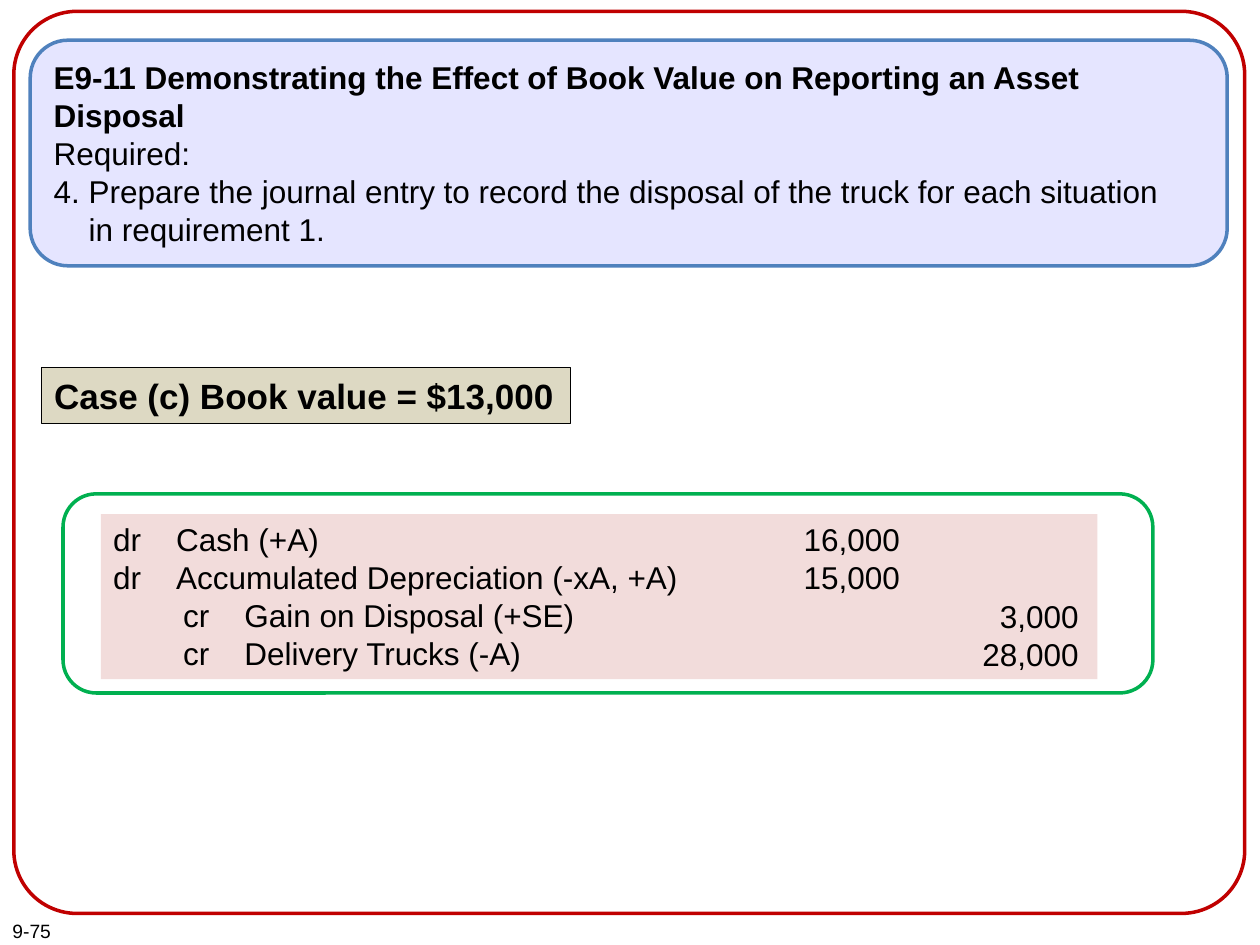
import pptx
import pptx.dml.color
import pptx.enum.shapes
import pptx.enum.text
import pptx.util

Pt = pptx.util.Pt
SHAPE = pptx.enum.shapes.MSO_SHAPE
ANCHOR = pptx.enum.text.MSO_ANCHOR
ALIGN = pptx.enum.text.PP_ALIGN


def color(value):
    """Return the colour for a hex string."""
    return pptx.dml.color.RGBColor.from_string(value)


def add_panel(shapes, kind, box, fill=None, line=None, weight=2):
    """Add a preset shape with an optional fill and outline."""
    panel = shapes.add_shape(kind, *map(Pt, box))
    panel.shadow.inherit = False
    if fill:
        panel.fill.solid()
        panel.fill.fore_color.rgb = color(fill)
    else:
        panel.fill.background()
    if line:
        panel.line.color.rgb = color(line)
        panel.line.width = Pt(weight)
    else:
        panel.line.fill.background()
    return panel


def write(shape, lines, size=18, align=ALIGN.LEFT, anchor=ANCHOR.TOP, wrap=True):
    """Write lines of (text, bold, left margin, hanging indent) into a shape."""
    frame = shape.text_frame
    for name, value in {"word_wrap": wrap, "vertical_anchor": anchor}.items():
        setattr(frame, name, value)
    for index, (text, bold, margin, hanging) in enumerate(lines):
        paragraph = frame.paragraphs[0] if index == 0 else frame.add_paragraph()
        paragraph.text = text
        paragraph.alignment = align
        if margin:
            properties = paragraph._p.get_or_add_pPr()
            properties.set("marL", str(Pt(margin)))
            properties.set("indent", str(-Pt(hanging)))
        for run in paragraph.runs:
            for name, value in {"name": "Arial", "size": Pt(size), "bold": bold}.items():
                setattr(run.font, name, value)
            run.font.color.rgb = color("000000")


def add_text(shapes, box, lines, **layout):
    """Add a text box holding the given lines."""
    write(shapes.add_textbox(*map(Pt, box)), lines, **layout)


def add_journal_entry(slide):
    """Add the grouped journal entry with its debit and credit columns."""
    shapes = slide.shapes.add_group_shape().shapes
    top, height = 293.8, 94.3
    add_panel(shapes, SHAPE.ROUNDED_RECTANGLE, (36, 282.2, 622.8, 113.8), line="00B050")
    add_panel(shapes, SHAPE.RECTANGLE, (57.6, top, 569.5, height), fill="F2DCDB")
    add_text(shapes, (57.6, top, 426.2, height), [
        ("dr\tCash (+A)", False, 36, 36),
        ("dr\tAccumulated Depreciation (-xA, +A)", False, 36, 36),
        ("cr\tGain on Disposal (+SE)", False, 75, 35),
        ("cr\tDelivery Trucks (-A)", False, 75, 35),
    ])
    columns = [
        (537.8, ANCHOR.BOTTOM, ("3,000", "28,000")),
        (435.6, ANCHOR.TOP, ("16,000", "15,000")),
    ]
    for left, anchor, amounts in columns:
        add_text(shapes, (left, top, 85.7, height),
                 [(amount, False, 0, 0) for amount in amounts],
                 align=ALIGN.RIGHT, anchor=anchor)


def main():
    """Build the slide and save it."""
    deck = pptx.Presentation()
    deck.slide_width, deck.slide_height = Pt(720), Pt(540)
    slide = deck.slides.add_slide(deck.slide_layouts[6])
    shapes = slide.shapes

    add_text(shapes, (0, 522, 102.2, 20.9), [("9-75", False, 0, 0)], size=11)
    border = add_panel(shapes, SHAPE.ROUNDED_RECTANGLE, (7.9, 6.5, 703.4, 515.5), line="C00000")
    border.adjustments[0] = 0.07

    case = add_panel(shapes, SHAPE.RECTANGLE, (23.8, 210.2, 302.4, 31.7), "DDD9C3", "000000", 0.75)
    write(case, [("Case (c) Book value = $13,000", True, 0, 0)],
          size=20, anchor=ANCHOR.MIDDLE, wrap=False)

    exercise = add_panel(shapes, SHAPE.ROUNDED_RECTANGLE, (17.3, 23, 684, 128.9), "E5E5FF", "4F81BD")
    write(exercise, [
        ("E9-11 Demonstrating the Effect of Book Value on Reporting an Asset Disposal", True, 0, 0),
        ("Required:", False, 0, 0),
        ("4. Prepare the journal entry to record the disposal of the truck for each situation\v"
         "in requirement 1.", False, 20, 20),
    ], anchor=ANCHOR.MIDDLE)

    add_journal_entry(slide)
    deck.save("out.pptx")


if __name__ == "__main__":
    main()
